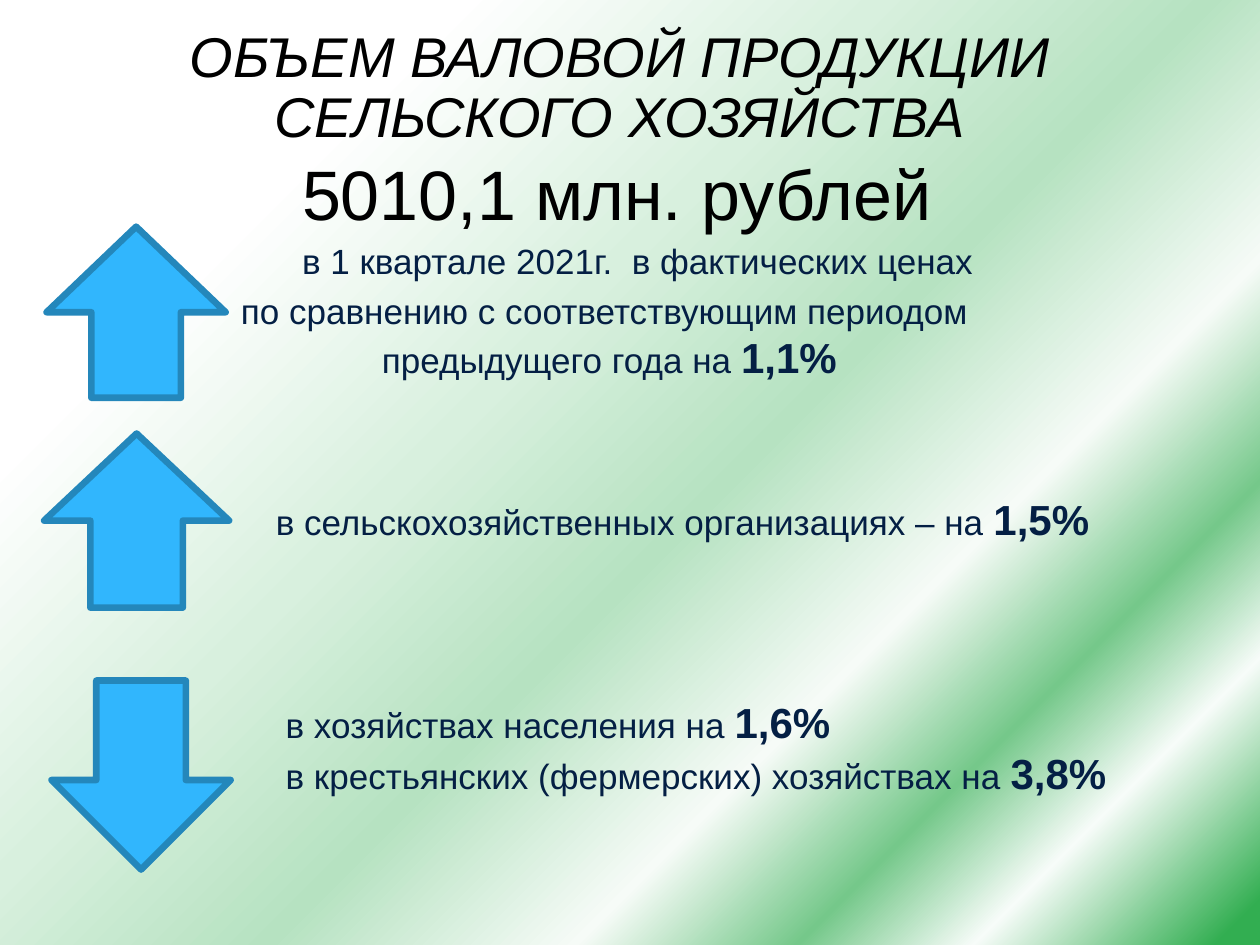
from lxml.etree import SubElement
from pptx import Presentation
from pptx.dml.color import RGBColor
from pptx.enum.shapes import MSO_SHAPE as Shape
from pptx.enum.text import MSO_AUTO_SIZE as AutoSize, PP_ALIGN as Align
from pptx.oxml.ns import qn
from pptx.util import Cm, Pt

COLORS = {
    "black": "000000",
    "navy": "041F44",
    "arrow": "31B6FD",
    "arrow_edge": "2487BB",
}
# Background bands: position in percent, colour
BANDS = [(21, "FFFFFF"), (40, "D8F0DE"), (55, "B6E2C1"), (69, "F6FBF7"),
         (79, "75C88A"), (87, "F7FCF9"), (98, "32AE51")]

prs = Presentation()
prs.slide_width, prs.slide_height = Cm(25.4), Cm(19.05)
slide = prs.slides.add_slide(prs.slide_layouts[6])


def add_text(paragraphs, box, size=20, color="navy", italic=False,
             align=Align.LEFT, spacing=None, wrap=False, grow=True):
    """Each paragraph is a pair: plain text and a bold 24 pt figure after it."""
    frame = slide.shapes.add_textbox(*(Cm(v) for v in box)).text_frame
    frame.word_wrap = wrap
    frame.auto_size = AutoSize.SHAPE_TO_FIT_TEXT if grow else AutoSize.NONE
    for i, (plain, figure) in enumerate(paragraphs):
        paragraph = frame.add_paragraph() if i else frame.paragraphs[0]
        paragraph.alignment = align
        paragraph.line_spacing = spacing
        for words, points, bold in ((plain, size, False), (figure, 24, True)):
            if words:
                run = paragraph.add_run()
                run.text = words
                run.font.name = "Arial"
                run.font.size = Pt(points)
                run.font.bold = bold
                run.font.italic = italic
                run.font.color.rgb = RGBColor.from_string(COLORS[color])


# Diagonal background gradient
background = slide.background.fill
background.gradient()
gradient = slide.background._cSld.find(".//" + qn("a:gradFill"))
stops = gradient.find(qn("a:gsLst"))
for stop in list(stops):
    stops.remove(stop)
for percent, color in BANDS:
    stop = SubElement(stops, qn("a:gs"), pos=str(percent * 1000))
    SubElement(stop, qn("a:srgbClr"), val=color)
direction = gradient.find(qn("a:lin"))
direction.set("ang", str(45 * 60000))
direction.set("scaled", "0")

# Growth and decline arrows
for kind, box in (
    (Shape.UP_ARROW, (0.94, 4.57, 3.61, 3.45)),
    (Shape.UP_ARROW, (0.89, 8.74, 3.73, 3.51)),
    (Shape.DOWN_ARROW, (1.04, 13.72, 3.61, 3.81)),
):
    arrow = slide.shapes.add_shape(kind, *(Cm(v) for v in box))
    arrow.shadow.inherit = False
    arrow.fill.solid()
    arrow.fill.fore_color.rgb = RGBColor.from_string(COLORS["arrow"])
    arrow.line.color.rgb = RGBColor.from_string(COLORS["arrow_edge"])
    arrow.line.width = Pt(3.78)

# Title and total
add_text([("ОБЪЕМ ВАЛОВОЙ ПРОДУКЦИИ СЕЛЬСКОГО ХОЗЯЙСТВА", "")],
         (1.7, 0.46, 21.59, 3.07), size=32, color="black", italic=True,
         align=Align.CENTER, spacing=0.9, wrap=True, grow=False)
add_text([("5010,1 млн. рублей", "")], (5.84, 2.92, 13.34, 1.96),
         size=40, color="black")
add_text([("в 1 квартале 2021г.  в фактических ценах", "")],
         (5.84, 4.7, 14.12, 1.12))

# Changes against the previous year
add_text([("по сравнению с соответствующим периодом ", ""),
          ("предыдущего года на ", "1,1%")],
         (4.55, 5.72, 15.47, 2.13), align=Align.CENTER)
add_text([("в сельскохозяйственных организациях – на ", "1,5%")],
         (5.31, 9.83, 17.02, 1.27))
add_text([("в хозяйствах населения на ", "1,6%"),
          ("в крестьянских (фермерских) хозяйствах на ", "3,8%")],
         (5.51, 13.92, 17.4, 2.31), wrap=True)

prs.save("out.pptx")
